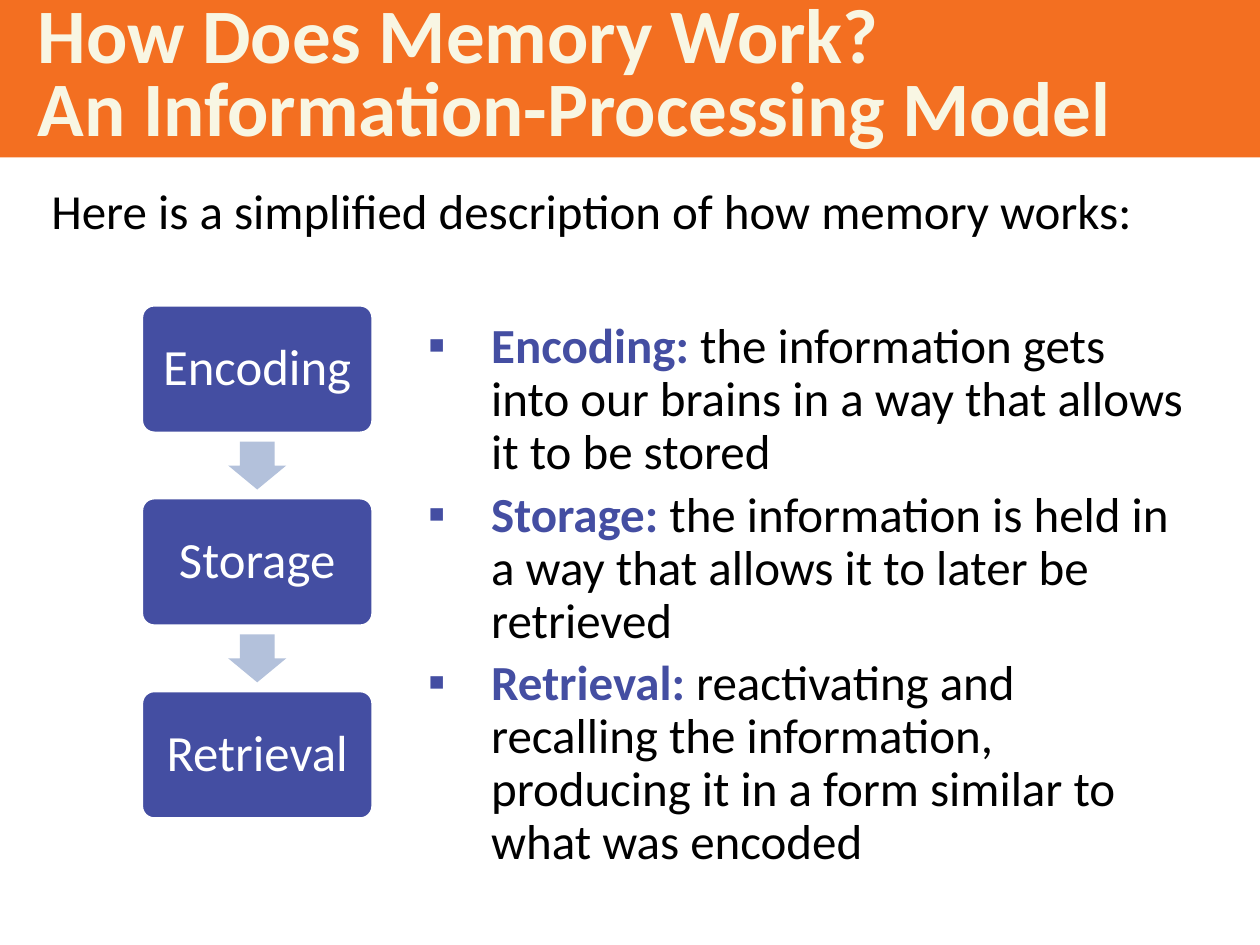
import pptx
import pptx.util
import pptx.dml.color
import pptx.enum.shapes
import pptx.enum.text
import lxml.etree
from pptx.oxml.ns import qn

Pt = pptx.util.Pt
RGB = pptx.dml.color.RGBColor
Shape = pptx.enum.shapes.MSO_SHAPE
Align = pptx.enum.text.PP_ALIGN
Anchor = pptx.enum.text.MSO_ANCHOR

ORANGE = RGB(0xF3, 0x6F, 0x21)
CREAM = RGB(0xF8, 0xF6, 0xE3)
INDIGO = RGB(0x44, 0x4E, 0xA2)
PALE = RGB(0xB3, 0xC1, 0xDB)
WHITE = RGB(0xFF, 0xFF, 0xFF)
BLACK = RGB(0, 0, 0)

STEPS = [
    ("Encoding", "the information gets into our brains in a way that allows it to be stored"),
    ("Storage", "the information is held in a way that allows it to later be retrieved"),
    ("Retrieval", "reactivating and recalling the information, "
                  "producing it in a form similar to what was encoded"),
]


class Deck:
    face = "Calibri"
    size = 28

    def __init__(self, width, height):
        self.file = pptx.Presentation()
        self.file.slide_width, self.file.slide_height = Pt(width), Pt(height)
        self.slide = self.file.slides.add_slide(self.file.slide_layouts[5])

    def style(self, run, color, size=None, bold=False):
        run.font.name = self.face
        run.font.size = Pt(size or self.size)
        run.font.bold = bold
        run.font.color.rgb = color

    def frame(self, shape, inset, anchor):
        frame = shape.text_frame
        frame.word_wrap = True
        frame.auto_size = pptx.enum.text.MSO_AUTO_SIZE.NONE
        frame.vertical_anchor = anchor
        frame.margin_left, frame.margin_top, frame.margin_right, frame.margin_bottom = map(Pt, inset)
        return frame

    def title(self, text, left, top, width, height):
        shape = self.slide.shapes.title
        shape.left, shape.top, shape.width, shape.height = map(Pt, (left, top, width, height))
        shape.fill.solid()
        shape.fill.fore_color.rgb = ORANGE
        frame = self.frame(shape, (21.6, 3.6, 7.2, 3.6), Anchor.MIDDLE)
        frame.text = text
        para = frame.paragraphs[0]
        para.alignment = Align.LEFT
        para.line_spacing = Pt(42)
        for run in para.runs:
            self.style(run, CREAM, 44, True)

    def text(self, left, top, width, height):
        box = self.slide.shapes.add_textbox(*map(Pt, (left, top, width, height)))
        return self.frame(box, (7.2, 3.6, 7.2, 3.6), Anchor.TOP)

    def indent(self, para, hang):
        para.space_before = Pt(5.6)
        props = para._p.get_or_add_pPr()
        props.set("marL", str(Pt(hang)))
        props.set("indent", str(-Pt(hang)))
        return props

    def intro(self, text, *place):
        para = self.text(*place).paragraphs[0]
        para.text = text
        self.indent(para, 27)
        self.style(para.runs[0], BLACK)

    def points(self, items, *place):
        frame = self.text(*place)
        for i, (term, gloss) in enumerate(items):
            para = frame.add_paragraph() if i else frame.paragraphs[0]
            para.line_spacing = 0.9
            props = self.indent(para, 36)
            lxml.etree.SubElement(props, qn("a:buFont")).set("typeface", self.face)
            lxml.etree.SubElement(props, qn("a:buChar")).set("char", "▪")
            for words, color, bold in ((f"{term}: ", INDIGO, True), (gloss, BLACK, False)):
                run = para.add_run()
                run.text = words
                self.style(run, color, bold=bold)

    def shape(self, kind, fill, *place):
        shape = self.slide.shapes.add_shape(kind, *map(Pt, place))
        shape.shadow.inherit = False
        shape.fill.solid()
        shape.fill.fore_color.rgb = fill
        shape.line.fill.background()
        return shape

    def step(self, label, *place):
        shape = self.shape(Shape.ROUNDED_RECTANGLE, INDIGO, *place)
        shape.adjustments[0] = 0.1
        shape.line.color.rgb = WHITE
        shape.line.width = Pt(2)
        frame = self.frame(shape, (8, 8, 8, 8), Anchor.MIDDLE)
        frame.text = label
        para = frame.paragraphs[0]
        para.alignment = Align.CENTER
        para.line_spacing = 0.9
        self.style(para.runs[0], WHITE, 29)

    def arrow(self, *place):
        shape = self.shape(Shape.DOWN_ARROW, PALE, *place)
        shape.adjustments[0] = 0.6
        shape.adjustments[1] = 0.5


def main():
    deck = Deck(720, 540)
    deck.title("How Does Memory Work?\vAn Information-Processing Model", 0, 0, 720, 90)
    deck.intro("Here is a simplified description of how memory works:", 22.3, 99.4, 638.6, 59.8)
    deck.points(STEPS, 237.6, 180, 446.4, 344.2)

    left, top, width, height, pitch = 80.8, 174.2, 132.4, 73.4, 110.2
    wide, tall = 33.2, 27.4
    for i, (term, gloss) in enumerate(STEPS):
        y = top + i * pitch
        if i:
            gap = pitch - height
            deck.arrow(left + (width - wide) / 2, y - (gap + tall) / 2, wide, tall)
        deck.step(term, left, y, width, height)
    deck.file.save("out.pptx")


if __name__ == "__main__":
    main()
